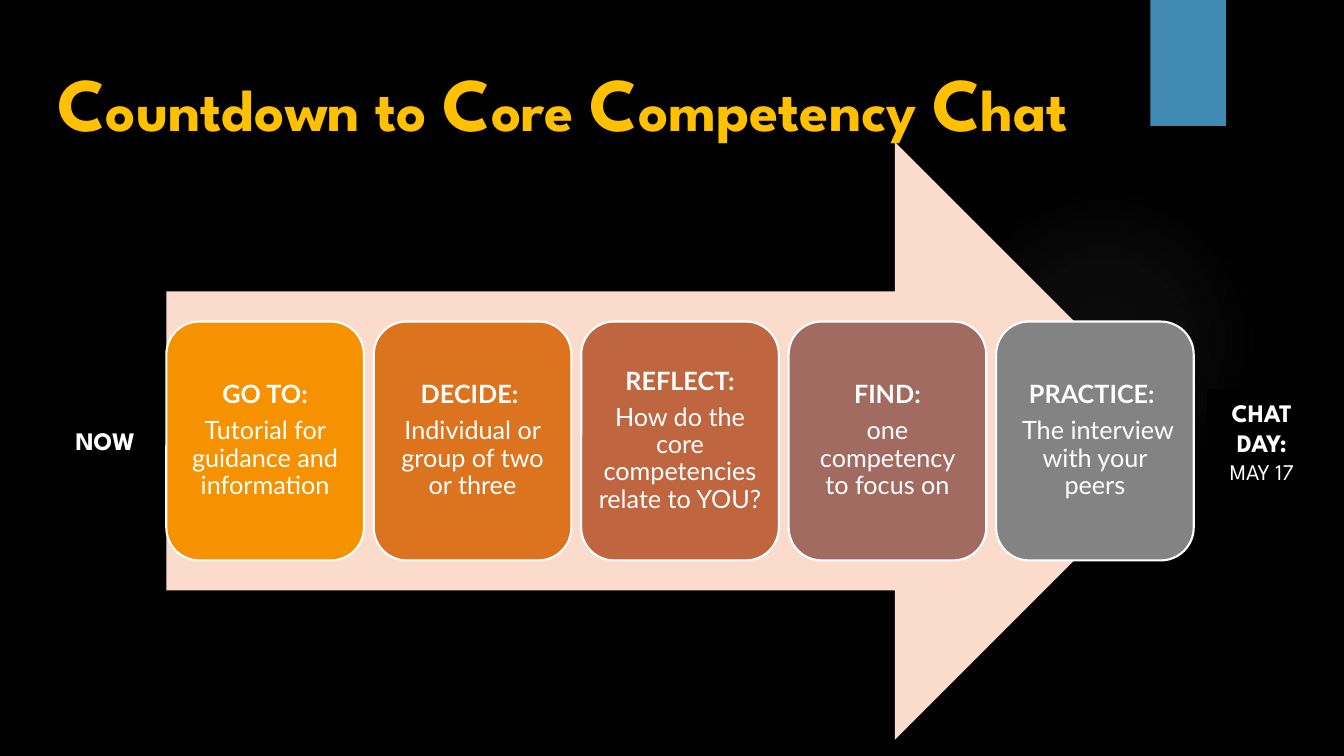
from pptx import Presentation
from pptx.dml.color import RGBColor
from pptx.enum.shapes import MSO_SHAPE as Kind
from pptx.enum.text import MSO_ANCHOR as Anchor, PP_ALIGN as Align
from pptx.oxml import parse_xml
from pptx.util import Inches, Pt

HEX = {
    "black": "000000", "white": "FFFFFF", "gold": "FFC000", "blue": "418AB3",
    "peach": "FBDCCC", "amber": "F69200", "orange": "DB731F", "rust": "BF6540",
    "mauve": "A16B62", "gray": "838383", "glow": "9E9E9E",
}
HEAD = "League Spartan"
BODY = "Lato"
STEPS = [
    ("amber", "GO TO:", "Tutorial for guidance and information"),
    ("orange", "DECIDE: ", "Individual or group of two or three"),
    ("rust", "REFLECT:", "How do the core competencies relate to YOU?"),
    ("mauve", "FIND:", "one competency to focus on"),
    ("gray", "PRACTICE: ", " The interview with your peers"),
]
TITLE = ["Countdown to ", "Core ", "Competency ", "Chat"]
NS = "http://schemas.openxmlformats.org/drawingml/2006/main"


def color(name):
    return RGBColor.from_string(HEX[name])


def add_form(slide, kind, box, fill, line=None):
    form = slide.shapes.add_shape(kind, *map(Inches, box))
    form.shadow.inherit = False
    form.fill.solid()
    form.fill.fore_color.rgb = color(fill)
    if line:
        form.line.color.rgb = color(line)
        form.line.width = Pt(1.5)
    else:
        form.line.fill.background()
    return form


def add_run(para, text, size, font, bold=True, tone="white"):
    run = para.add_run()
    run.text = text
    run.font.size = Pt(size)
    run.font.name = font
    run.font.bold = bold
    run.font.color.rgb = color(tone)


def add_lines(form, lines, font):
    frame = form.text_frame
    frame.word_wrap = True
    frame.vertical_anchor = Anchor.MIDDLE
    for i, (text, size, bold) in enumerate(lines):
        para = frame.add_paragraph() if i else frame.paragraphs[0]
        para.alignment = Align.CENTER
        add_run(para, text, size, font, bold)
    return frame


def add_glow(slide):
    form = add_form(slide, Kind.OVAL, (9.41, 1.83, 3.08, 3.08), "glow")
    stops = "".join(
        f'<a:gs pos="{pos * 1000}"><a:srgbClr val="{HEX["glow"]}">'
        f'<a:alpha val="{alpha * 1000}"/></a:srgbClr></a:gs>'
        for pos, alpha in [(0, 7), (36, 6), (69, 0)])
    grad = parse_xml(
        f'<a:gradFill xmlns:a="{NS}"><a:gsLst>{stops}</a:gsLst>'
        '<a:path path="circle"><a:fillToRect l="50000" t="50000" '
        'r="50000" b="50000"/></a:path></a:gradFill>')
    props = form.element.spPr
    props.replace(props.find(f"{{{NS}}}solidFill"), grad)


def add_title(slide):
    box = slide.shapes.add_textbox(*map(Inches, (0.47, 0.51, 11.76, 1.53)))
    frame = box.text_frame
    frame.word_wrap = True
    para = frame.paragraphs[0]
    for word in TITLE:
        add_run(para, word[0], 54, HEAD, tone="gold")
        add_run(para, word[1:], 42, HEAD, tone="gold")


def add_card(slide, left, fill, head, body):
    card = add_form(slide, Kind.ROUNDED_RECTANGLE, (left, 3.19, 1.96, 2.37),
                    fill, "white")
    frame = add_lines(card, [(head, 18, True), (body, 18, False)], BODY)
    frame.margin_left = frame.margin_right = Inches(0.07)
    frame.margin_top = frame.margin_bottom = Inches(0.07)
    for para in frame.paragraphs:
        para.line_spacing = 0.9
        para.space_after = Pt(6.3)


def add_label(slide, box, lines):
    add_lines(add_form(slide, Kind.RECTANGLE, box, "black", "black"),
              lines, HEAD)


def main():
    deck = Presentation()
    deck.slide_width = Inches(13.33)
    deck.slide_height = Inches(7.5)
    slide = deck.slides.add_slide(deck.slide_layouts[6])
    slide.background.fill.solid()
    slide.background.fill.fore_color.rgb = color("black")
    add_glow(slide)
    add_form(slide, Kind.RECTANGLE, (11.41, 0, 0.75, 1.25), "blue")
    add_title(slide)
    add_form(slide, Kind.RIGHT_ARROW, (1.65, 1.41, 10.19, 5.93), "peach")
    step = (9.88 - 1.65) / (len(STEPS) - 1)
    for i, (fill, head, body) in enumerate(STEPS):
        add_card(slide, 1.65 + i * step, fill, head, body)
    add_label(slide, (11.98, 3.87, 1.07, 1.01),
              [("CHAT DAY:", 18, True), ("MAY 17", 16, False)])
    add_label(slide, (0.51, 4.17, 1.07, 0.4), [("NOW", 18, True)])
    deck.save("out.pptx")


if __name__ == "__main__":
    main()
